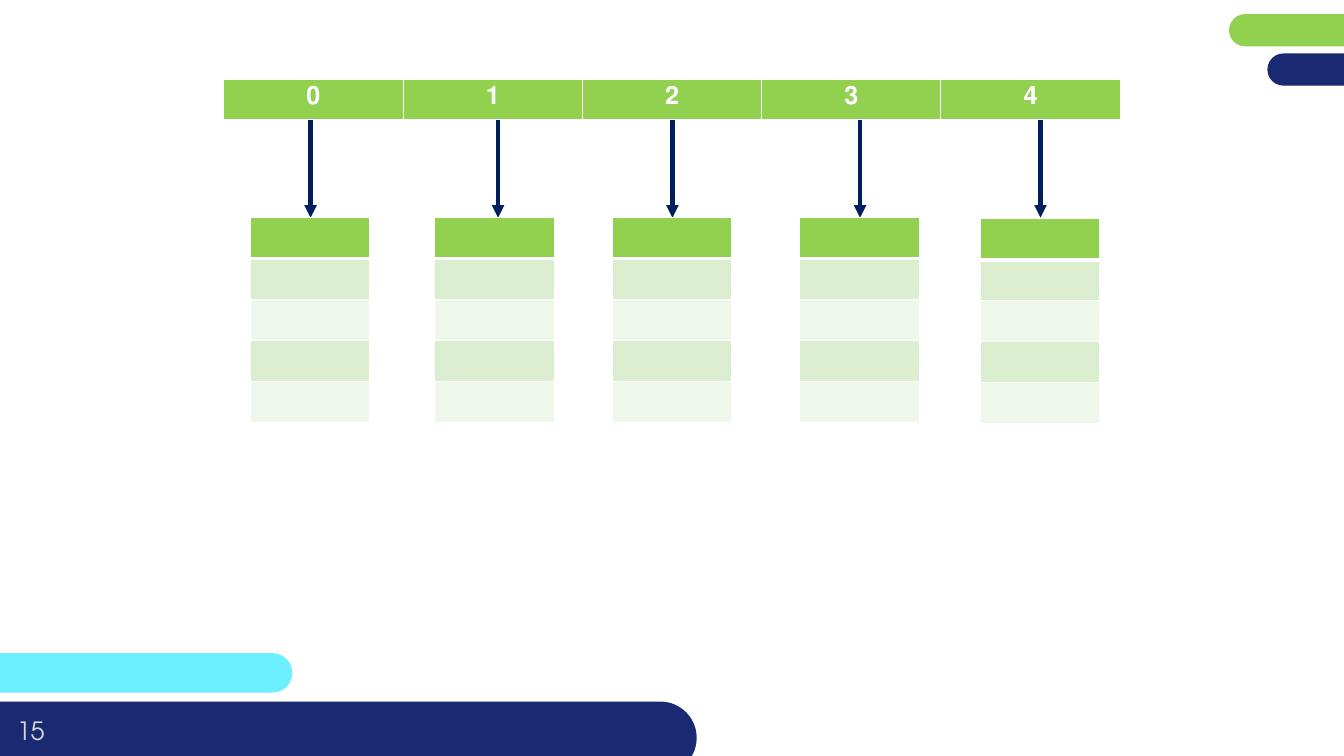
from lxml.etree import SubElement
from pptx import Presentation
from pptx.dml.color import RGBColor
from pptx.enum.shapes import MSO_CONNECTOR, MSO_SHAPE
from pptx.enum.text import MSO_ANCHOR, PP_ALIGN
from pptx.oxml.ns import qn
from pptx.util import Emu, Pt

NAVY = RGBColor(0x19, 0x2A, 0x72)
GREEN = RGBColor(0x92, 0xD0, 0x50)
CYAN = RGBColor(0x6C, 0xF0, 0xFF)
ARROW = RGBColor(0x00, 0x1F, 0x5E)
BAND_DARK = RGBColor(0xDC, 0xEE, 0xD0)
BAND_LIGHT = RGBColor(0xEE, 0xF7, 0xE9)
GREY = RGBColor(0xD9, 0xD9, 0xD9)
WHITE = RGBColor(0xFF, 0xFF, 0xFF)
FONT = "TeX Gyre Adventor"
EMU_PER_PX = 9144


def px(n):
    return Emu(n * EMU_PER_PX)


def write(tf, text, size=18, color=WHITE, bold=False, rtl=False):
    p = tf.paragraphs[0]
    p.alignment = PP_ALIGN.CENTER
    if rtl:
        p._p.get_or_add_pPr().set("rtl", "1")
    r = p.add_run()
    r.text = text
    r.font.name = FONT
    r.font.size = Pt(size)
    r.font.bold = bold
    r.font.color.rgb = color


def add_bar(s, x, y, w, h, color):
    sp = s.shapes.add_shape(MSO_SHAPE.ROUNDED_RECTANGLE, px(x), px(y), px(w), px(h))
    sp.adjustments[0] = 0.5
    sp.shadow.inherit = False
    sp.fill.solid()
    sp.fill.fore_color.rgb = color
    sp.line.fill.background()


def add_page_number(s, number):
    tf = s.shapes.add_textbox(px(-14), px(696), px(89), px(57)).text_frame
    tf.word_wrap = True
    tf.vertical_anchor = MSO_ANCHOR.MIDDLE
    write(tf, number, color=GREY)


def add_border(cell, side, width):
    ln = SubElement(cell._tc.get_or_add_tcPr(), qn(f"a:ln{side}"), w=str(Pt(width)))
    fill = SubElement(ln, qn("a:solidFill"))
    SubElement(fill, qn("a:srgbClr"), val=str(WHITE))


def add_grid(s, x, y, w, h, fills, labels):
    rows, cols = len(fills), len(labels)
    table = s.shapes.add_table(rows, cols, px(x), px(y), px(w), px(h)).table
    table.first_row = table.horz_banding = False
    for i, fill in enumerate(fills):
        table.rows[i].height = Emu(px(h) // rows)
        for j, label in enumerate(labels):
            cell = table.cell(i, j)
            if j == 0:
                add_border(cell, "L", 1)
            add_border(cell, "R", 1)
            if i == 0:
                add_border(cell, "T", 1)
            add_border(cell, "B", 3 if i == 0 else 1)
            cell.fill.solid()
            cell.fill.fore_color.rgb = fill
            if label:
                write(cell.text_frame, label, bold=True, rtl=True)


def add_arrow(s, x, top, bottom):
    c = s.shapes.add_connector(MSO_CONNECTOR.STRAIGHT, px(x), px(top), px(x), px(bottom))
    c.line.color.rgb = ARROW
    c.line.width = Pt(3)
    SubElement(c.line._get_or_add_ln(), qn("a:tailEnd"), type="triangle")
    SubElement(c._element.spPr, qn("a:effectLst"))


def main():
    prs = Presentation()
    prs.slide_width, prs.slide_height = px(1333), px(750)
    s = prs.slides.add_slide(prs.slide_layouts[6])

    add_bar(s, 1257, 53, 172, 32, NAVY)
    add_bar(s, 1219, 14, 206, 32, GREEN)
    add_bar(s, -53, 648, 343, 39, CYAN)
    add_bar(s, -107, 696, 798, 72, NAVY)
    add_page_number(s, "15")

    add_grid(s, 222, 79, 889, 41, [GREEN], ["0", "1", "2", "3", "4"])
    bucket_fills = [GREEN] + [BAND_DARK, BAND_LIGHT] * 2
    buckets = [(308, 248, 216), (494, 431, 216), (667, 607, 216),
               (853, 793, 216), (1032, 972, 217)]
    for arrow_x, x, y in buckets:
        add_arrow(s, arrow_x, 119, 216)
        add_grid(s, x, y, 119, 203, bucket_fills, [""])

    prs.save("out.pptx")


if __name__ == "__main__":
    main()
